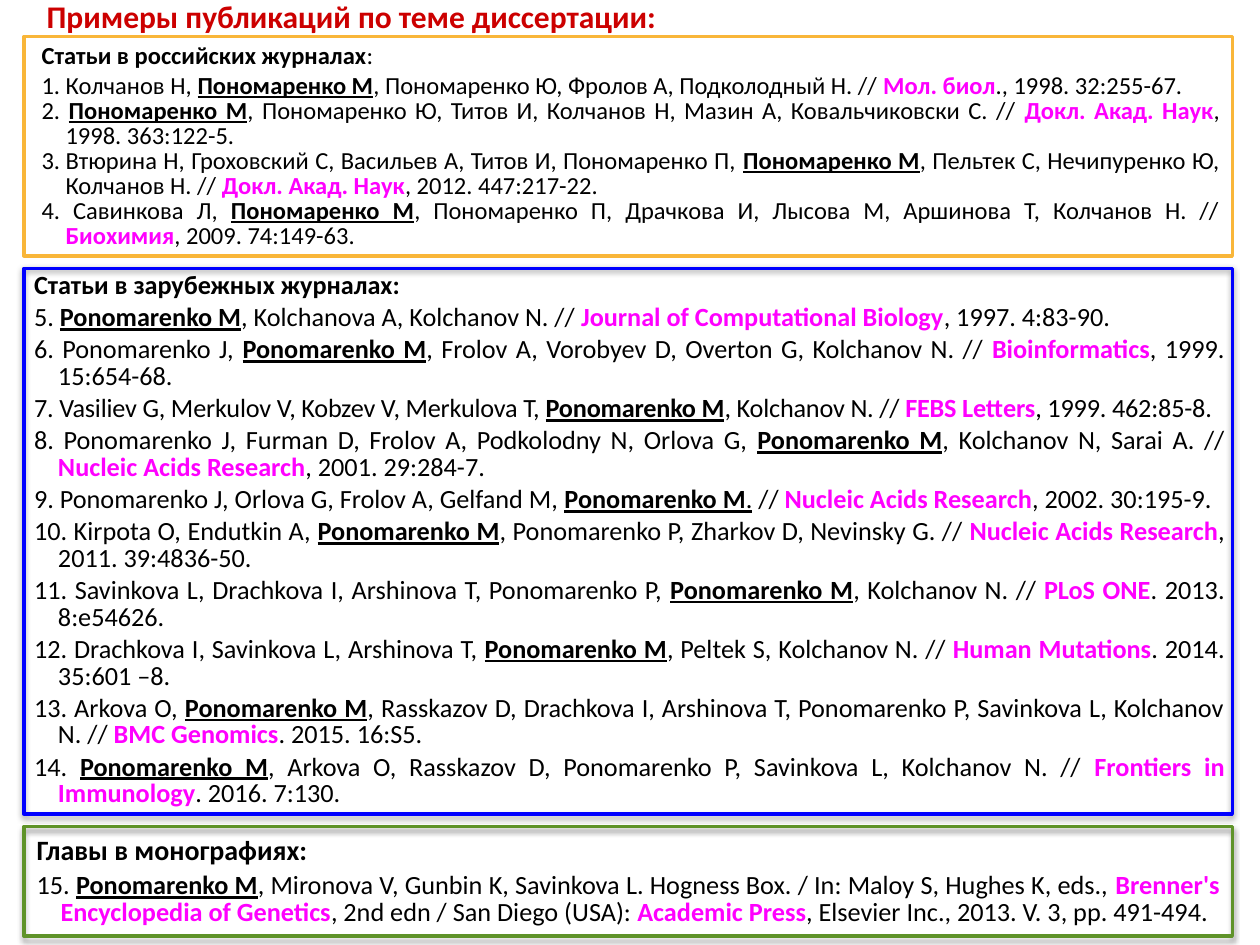
from lxml import etree
from pptx import Presentation
from pptx.dml.color import RGBColor
from pptx.enum.shapes import MSO_SHAPE
from pptx.enum.text import MSO_ANCHOR, MSO_AUTO_SIZE, PP_ALIGN
from pptx.oxml import parse_xml
from pptx.oxml.ns import nsdecls, qn
from pptx.util import Inches, Pt

COLOURS = {"title": "CC0000", "text": "000000", "source": "FF00FF",
           "russian": "F9B639", "foreign": "0000FF", "chapters": "5F9329"}
FONT = "Calibri"
PAGE_W, PAGE_H = 10, 7.5
FRAME_LEFT, FRAME_W = 0.19, 9.59
HANGING = 0.19
TITLE = "Примеры публикаций по теме диссертации:"
TITLE_BOX = (0.27, -0.07, 9.37, 0.4)
TIGHT = "7. "  # the entry set with slightly condensed letters

# Each entry: text before the author, text after, then source and details in turn.
SECTIONS = [
    {"name": "russian", "author": "Пономаренко М",
     "heading": ("Статьи в российских журналах", ":"),
     "frame": (0.29, 1.74), "box": (0.23, 0.3, 9.55, 1.75), "shadow": False,
     "heading_size": 14, "size": 14, "heading_line": 0.85, "before": 0, "heading_after": 3,
     "entries": [
         ("1. Колчанов Н, ", ", Пономаренко Ю, Фролов А, Подколодный Н. // ",
          "Мол. биол", "., 1998. 32:255-67."),
         ("2. ", ", Пономаренко Ю, Титов И, Колчанов Н, Мазин А, Ковальчиковски С. // ",
          "Докл. Акад. Наук", ", 1998. 363:122-5."),
         ("3.\tВтюрина Н, Гроховский С, Васильев А, Титов И, Пономаренко П, ",
          ", Пельтек С, Нечипуренко Ю, Колчанов Н. // ",
          "Докл. Акад. Наук", ", 2012. 447:217-22."),
         ("4. Савинкова Л, ",
          ", Пономаренко П, Драчкова И, Лысова М, Аршинова Т, Колчанов Н. // ",
          "Биохимия", ", 2009. 74:149-63."),
     ]},
    {"name": "foreign", "author": "Ponomarenko M",
     "heading": ("Статьи в зарубежных журналах:", ""),
     "frame": (2.13, 4.33), "box": (0.17, 2.12, 9.65, 4.52), "shadow": True,
     "heading_size": 15, "size": 15, "heading_line": 0.85, "before": 3, "heading_after": 0,
     "entries": [
         ("5. ", ", Kolchanova A, Kolchanov N. // ",
          "Journal of Computational Biology", ", 1997. 4:83-90."),
         ("6. Ponomarenko J, ", ", Frolov A, Vorobyev D, Overton G, Kolchanov N. // ",
          "Bioinformatics", ", 1999. 15:654-68."),
         ("7. Vasiliev G, Merkulov V, Kobzev V, Merkulova T, ", ", Kolchanov N. // ",
          "FEBS Letters", ", 1999. 462:85-8."),
         ("8. Ponomarenko J, Furman D, Frolov A, Podkolodny N, Orlova G, ",
          ", Kolchanov N, Sarai A. // ",
          "Nucleic Acids Research", ", 2001. 29:284-7."),
         ("9. Ponomarenko J, Orlova G, Frolov A, Gelfand M, ", ". // ",
          "Nucleic Acids Research", ", 2002. 30:195-9."),
         ("10. Kirpota O, Endutkin A, ", ", Ponomarenko P, Zharkov D, Nevinsky G. // ",
          "Nucleic Acids Research", ", 2011. 39:4836-50."),
         ("11. Savinkova L, Drachkova I, Arshinova T, Ponomarenko P, ", ", Kolchanov N. // ",
          "PLoS ONE", ". 2013. 8:e54626."),
         ("12. Drachkova I, Savinkova L, Arshinova T, ", ", Peltek S, Kolchanov N. // ",
          "Human Mutations", ". 2014. 35:601 –8."),
         ("13. Arkova O, ", ", Rasskazov D, Drachkova I, Arshinova T, Ponomarenko P, "
          "Savinkova L, Kolchanov N. // ",
          "BMC Genomics", ". 2015. 16:S5."),
         ("14. ", ", Arkova O, Rasskazov D, Ponomarenko P, Savinkova L, Kolchanov N. // ",
          "Frontiers in Immunology", ". 2016. 7:130."),
     ]},
    {"name": "chapters", "author": "Ponomarenko M",
     "heading": ("Главы в монографиях:", ""),
     "frame": (6.56, 0.87), "box": (0.19, 6.56, 9.59, 0.86), "shadow": True,
     "heading_size": 16, "size": 15, "heading_line": 1.0, "before": 4, "heading_after": 0,
     "entries": [
         ("15. ", ", Mironova V, Gunbin K, Savinkova L. Hogness Box. / "
          "In: Maloy S, Hughes K, eds., ",
          "Brenner's Encyclopedia of Genetics", ", 2nd edn / San Diego (USA): ",
          "Academic Press", ", Elsevier Inc., 2013. V. 3, pp. 491-494."),
     ]},
]


def place(box, left, top, width, height):
    box.left, box.top = Inches(left), Inches(top)
    box.width, box.height = Inches(width), Inches(height)
    frame = box.text_frame
    frame.word_wrap = True
    frame.auto_size = MSO_AUTO_SIZE.NONE
    frame.vertical_anchor = MSO_ANCHOR.TOP
    return frame


def format_para(para, align, line=1.0, before=0, after=0, hanging=0):
    props = para._p.get_or_add_pPr()
    props.set("marL", str(Inches(hanging)))
    props.set("indent", str(-Inches(hanging)))
    etree.SubElement(props, qn("a:buNone"))
    para.alignment = align
    para.line_spacing = line
    para.space_before, para.space_after = Pt(before), Pt(after)


def add_span(para, text, size, colour="text", bold=False, underline=False, tight=False):
    if not text:
        return
    span = para.add_run()
    span.text = text
    font = span.font
    font.name, font.size = FONT, Pt(size)
    font.bold, font.underline = bold, underline
    font.color.rgb = RGBColor.from_string(COLOURS[colour])
    if tight:
        span._r.get_or_add_rPr().set("spc", "-10")


def add_entry(para, entry, author, size):
    before, after, *references = entry
    tight = before.startswith(TIGHT)
    add_span(para, before, size, tight=tight)
    add_span(para, author, size, bold=True, underline=True, tight=tight)
    if after.startswith("."):  # a full stop closing the author list is underlined too
        add_span(para, ".", size, underline=True)
        after = after[1:]
    add_span(para, after, size, tight=tight)
    for source, details in zip(references[::2], references[1::2]):
        add_span(para, source, size, "source", bold=True, tight=tight)
        add_span(para, details, size, tight=tight)


def add_frame(page, section):
    top, height = section["frame"]
    frame = page.shapes.add_shape(MSO_SHAPE.ROUNDED_RECTANGLE, Inches(FRAME_LEFT),
                                  Inches(top), Inches(FRAME_W), Inches(height))
    frame.adjustments[0] = 0
    frame.fill.background()
    frame.line.color.rgb = RGBColor.from_string(COLOURS[section["name"]])
    frame.line.width = Pt(2)
    frame.shadow.inherit = False
    if section["shadow"]:
        effects = frame._element.spPr.find(qn("a:effectLst"))
        effects.append(parse_xml(
            f'<a:outerShdw {nsdecls("a")} blurRad="{Pt(3.1)}" dist="{Pt(1.6)}" '
            'dir="5400000" rotWithShape="0"><a:srgbClr val="000000">'
            '<a:alpha val="38000"/></a:srgbClr></a:outerShdw>'))


def add_section(page, box, section):
    add_frame(page, section)
    frame = place(box, *section["box"])
    para = frame.paragraphs[0]
    format_para(para, PP_ALIGN.LEFT, section["heading_line"],
                after=section["heading_after"], hanging=HANGING)
    heading, ending = section["heading"]
    add_span(para, heading, section["heading_size"], bold=True)
    add_span(para, ending, section["heading_size"])
    for entry in section["entries"]:
        para = frame.add_paragraph()
        format_para(para, PP_ALIGN.JUSTIFY, 0.85, section["before"], hanging=HANGING)
        add_entry(para, entry, section["author"], section["size"])


def main():
    deck = Presentation()
    deck.slide_width, deck.slide_height = Inches(PAGE_W), Inches(PAGE_H)
    page = deck.slides.add_slide(deck.slide_layouts.get_by_name("Comparison"))
    title, *bodies = list(page.placeholders)

    para = place(title, *TITLE_BOX).paragraphs[0]
    format_para(para, PP_ALIGN.LEFT, after=12)
    add_span(para, TITLE, 18, "title", bold=True)

    for box, section in zip(bodies, SECTIONS):
        add_section(page, box, section)
    for spare in bodies[len(SECTIONS):]:
        spare._element.getparent().remove(spare._element)
    deck.save("out.pptx")


if __name__ == "__main__":
    main()
